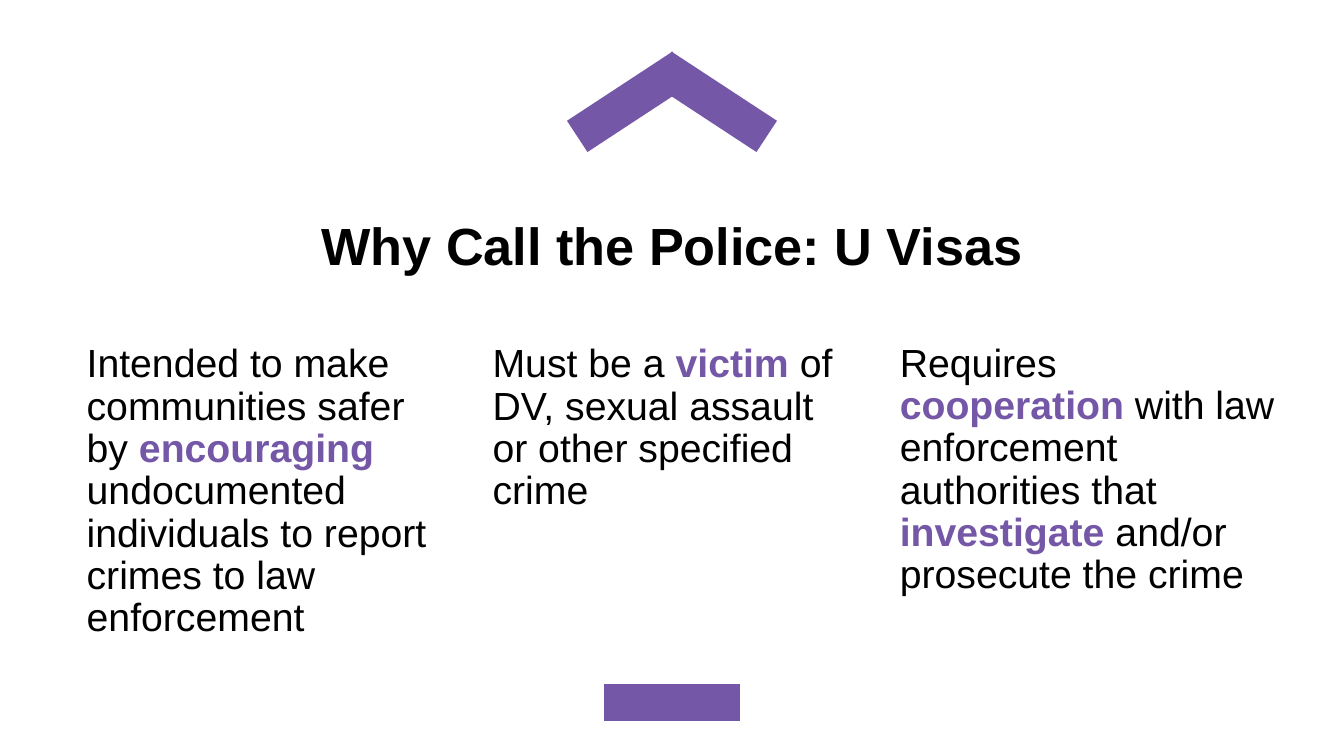
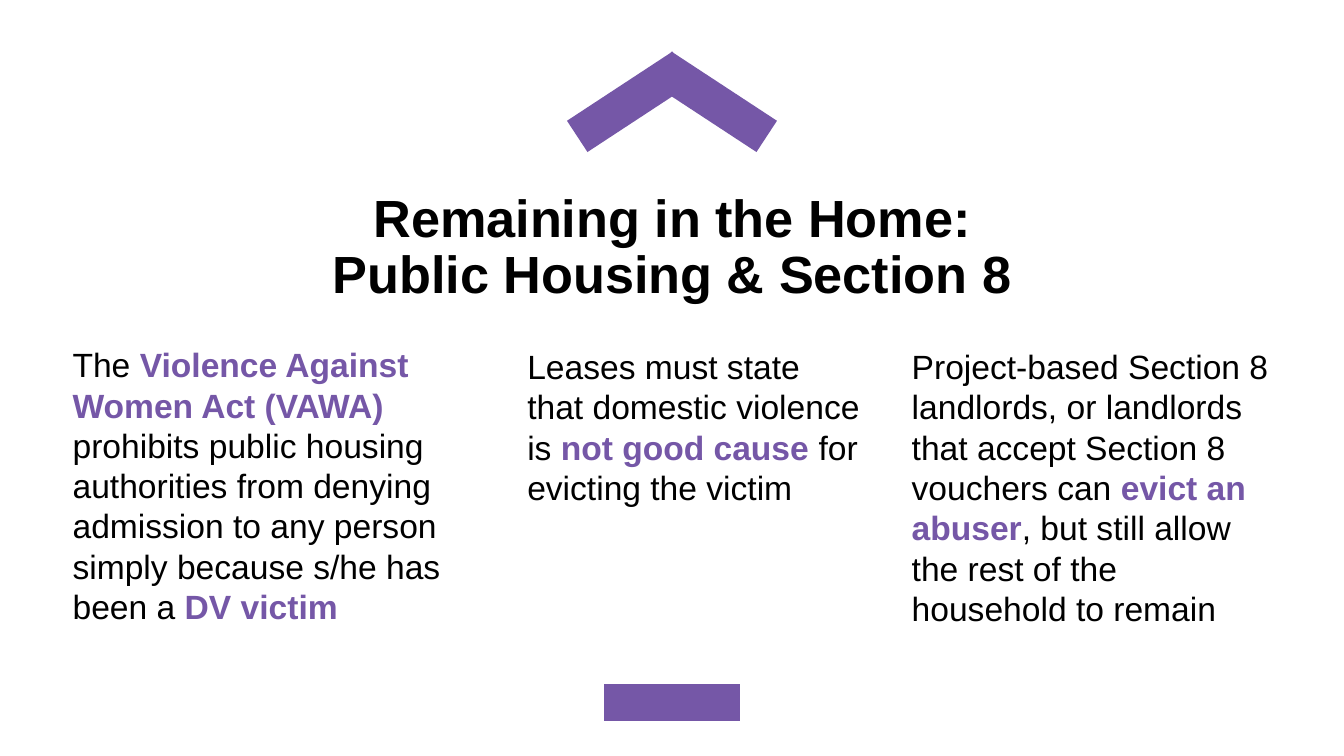
from pptx import Presentation
from pptx.dml.color import RGBColor
from pptx.enum.shapes import MSO_CONNECTOR as Connector
from pptx.enum.text import MSO_ANCHOR as Anchor, MSO_AUTO_SIZE as AutoSize, PP_ALIGN as Align
from pptx.oxml.ns import qn
from pptx.util import Pt
from lxml import etree

PX = 4572  # EMU in one px, at 200 px to the inch
PURPLE, BLACK, WHITE = "7557A7", "000000", "FFFFFF"
FONT = "Arial"
TIGHT, ROOMY = (15, 8), (20, 10)  # side and top text insets


def px(*lengths):
    return [length * PX for length in lengths]


def color(hex_string):
    return RGBColor.from_string(hex_string)


def add_bar(shapes, x1, y1, x2, y2):
    """Thick purple line."""
    bar = shapes.add_connector(Connector.STRAIGHT, *px(x1, y1, x2, y2))
    bar.line.color.rgb = color(PURPLE)
    bar.line.width = Pt(20)
    etree.SubElement(bar._element.spPr, qn("a:effectLst"))


def add_text_box(slide, box, insets, size):
    """Empty text box; returns its frame and first paragraph."""
    frame = slide.shapes.add_textbox(*px(*box)).text_frame
    frame.word_wrap = True
    side, top = px(*insets)
    frame.margin_left = frame.margin_right = side
    frame.margin_top = frame.margin_bottom = top
    paragraph = frame.paragraphs[0]
    paragraph.font.name = FONT
    paragraph.font.size = Pt(size)
    return frame, paragraph


def add_title(slide, lines):
    frame, paragraph = add_text_box(slide, (138, 261, 1724, 218), TIGHT, 28)
    frame.vertical_anchor = Anchor.MIDDLE
    paragraph.alignment = Align.CENTER
    paragraph.line_spacing = 0.9
    paragraph.font.bold = True
    paragraph.font.color.rgb = color(BLACK)
    for number, line in enumerate(lines):
        if number:
            paragraph.add_line_break()
        paragraph.add_run().text = line


def add_column(slide, box, text, size,
               insets=TIGHT, line_spacing=None, space_before=None, grow=False):
    """Body text; words between asterisks are bold and purple."""
    frame, paragraph = add_text_box(slide, box, insets, size)
    if grow:
        frame.auto_size = AutoSize.SHAPE_TO_FIT_TEXT
    if line_spacing:
        paragraph.line_spacing = line_spacing
    if space_before:
        paragraph.space_before = Pt(space_before)
    for number, part in enumerate(text.split("*")):
        if part:
            run = paragraph.add_run()
            run.text = part
            emphasized = number % 2 == 1
            run.font.bold = emphasized
            run.font.color.rgb = color(PURPLE if emphasized else BLACK)


def add_base_slide(presentation, title_lines):
    """Slide with the title, the roof and the bottom bar."""
    slide = presentation.slides.add_slide(presentation.slide_layouts[6])
    slide.background.fill.solid()
    slide.background.fill.fore_color.rgb = color(WHITE)
    add_title(slide, title_lines)
    roof = slide.shapes.add_group_shape()
    add_bar(roof.shapes, 984, 100, 1141, 203)
    add_bar(roof.shapes, 1016, 100, 859, 203)
    add_bar(slide.shapes, 899, 1045, 1101, 1045)
    return slide


def add_u_visa_slide(presentation):
    slide = add_base_slide(presentation, ["Why Call the Police: U Visas"])
    columns = [
        (114, 504, 552, "Intended to make communities safer by *encouraging *"
                        "undocumented individuals to report crimes to law enforcement"),
        (718, 504, 566, "Must be a *victim *of DV, sexual assault or other specified crime"),
        (1324, 503, 594, "Requires *cooperation *with law enforcement authorities that "
                         "*investigate *and/or prosecute the crime"),
    ]
    for left, top, width, text in columns:
        add_column(slide, (left, top, width, 478), text, 21, line_spacing=0.9, space_before=7.5)


def add_housing_slide(presentation):
    slide = add_base_slide(presentation, ["Remaining in the Home:", "Public Housing & Section 8"])
    add_column(slide, (93, 504, 618, 496),
               "The *Violence Against Women Act (VAWA) *prohibits public housing authorities "
               "from denying admission to any person simply because s/he has been a *DV victim*",
               18, space_before=7.5)
    add_column(slide, (765, 505, 540, 262),
               "Leases must state that domestic violence is *not good cause *for evicting the victim",
               18, insets=ROOMY, grow=True)
    add_column(slide, (1337, 505, 576, 444),
               "Project-based Section 8 landlords, or landlords that accept Section 8 vouchers can "
               "*evict an abuser*, but still allow the rest of the household to remain",
               18, insets=ROOMY, grow=True)


def main():
    presentation = Presentation()
    presentation.slide_width, presentation.slide_height = px(2000, 1125)
    add_u_visa_slide(presentation)
    add_housing_slide(presentation)
    presentation.save("out.pptx")


if __name__ == "__main__":
    main()
